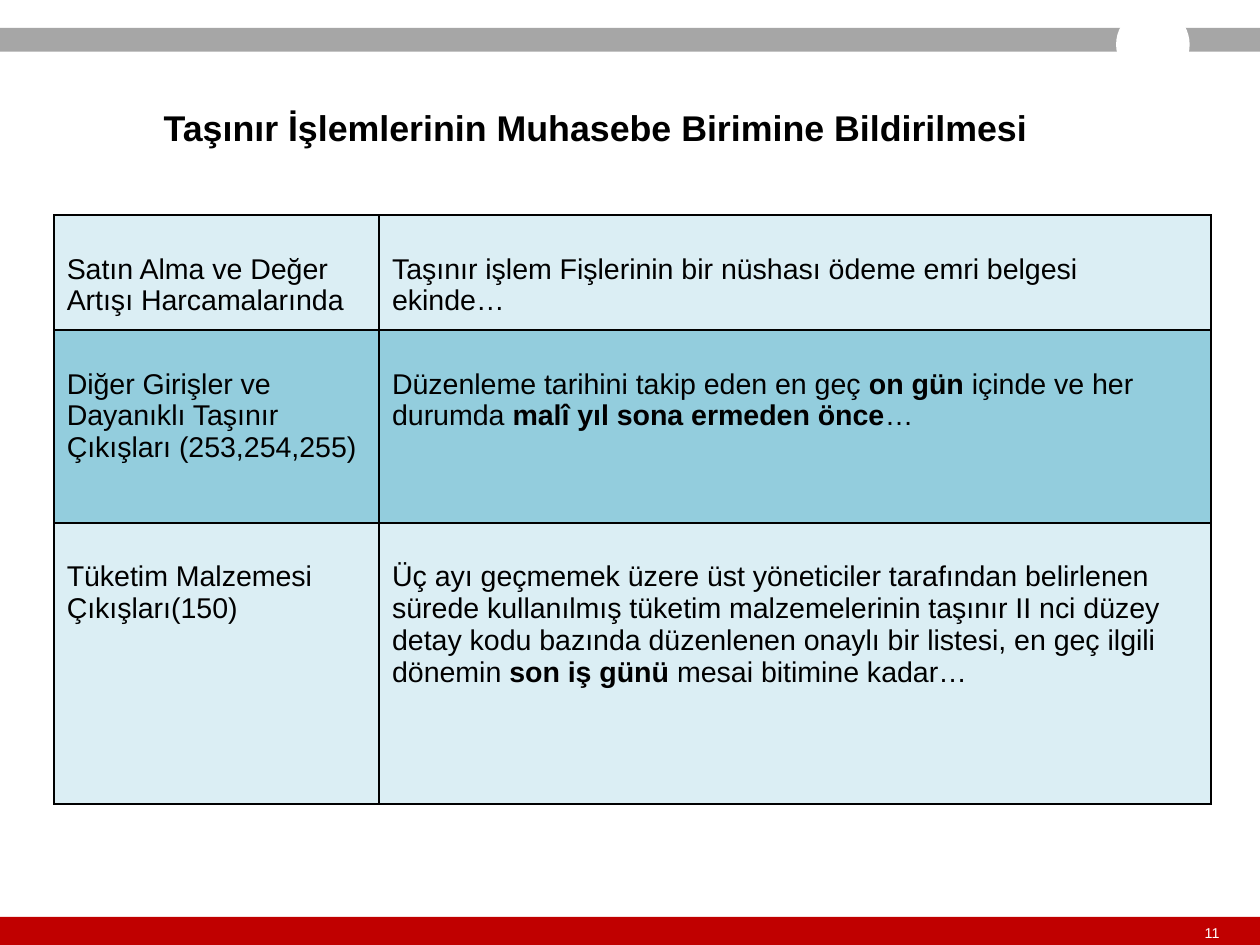
from lxml.etree import SubElement
from pptx import Presentation
from pptx.dml.color import RGBColor
from pptx.enum.shapes import MSO_SHAPE
from pptx.enum.text import MSO_ANCHOR, PP_ALIGN
from pptx.oxml.ns import qn
from pptx.util import Pt

BLACK = RGBColor(0x00, 0x00, 0x00)
WHITE = RGBColor(0xFF, 0xFF, 0xFF)
RED = RGBColor(0xC0, 0x00, 0x00)
GREY = RGBColor(0xA6, 0xA6, 0xA6)
PALE_BLUE = RGBColor(0xDB, 0xEE, 0xF4)
MID_BLUE = RGBColor(0x93, 0xCD, 0xDD)

WIDTH, HEIGHT = 705.6, 529.2

# Each cell is a list of runs; every second run is bold
DEADLINES = [
    (["Satın Alma ve Değer Artışı Harcamalarında"],
     ["Taşınır işlem Fişlerinin bir nüshası ödeme emri belgesi ekinde…"]),
    (["Diğer Girişler ve Dayanıklı Taşınır Çıkışları (253,254,255)"],
     ["Düzenleme tarihini takip eden en geç ", "on gün ",
      "içinde ve her durumda ", "malî yıl sona ermeden önce", "…"]),
    (["Tüketim Malzemesi Çıkışları(150)"],
     ["Üç ayı geçmemek üzere üst yöneticiler tarafından belirlenen sürede "
      "kullanılmış tüketim malzemelerinin taşınır II nci düzey detay kodu "
      "bazında düzenlenen onaylı bir listesi, en geç ilgili dönemin ",
      "son iş günü ", "mesai bitimine kadar…"]),
]


class SlideBuilder:
    font_name = "Arial"
    cell_size = 16
    cell_top_margin = 21.5

    def __init__(self, slide):
        self.slide = slide

    def style_run(self, run, size, color, bold=False):
        run.font.name = self.font_name
        run.font.size = Pt(size)
        run.font.color.rgb = color
        run.font.bold = bold

    def add_shape(self, kind, left, top, width, height, fill):
        shape = self.slide.shapes.add_shape(
            kind, Pt(left), Pt(top), Pt(width), Pt(height))
        shape.shadow.inherit = False
        shape.fill.solid()
        shape.fill.fore_color.rgb = fill
        shape.line.fill.background()
        return shape

    def set_text(self, shape, text, size, color, margin, bold=False):
        text_frame = shape.text_frame
        text_frame.text = text
        text_frame.vertical_anchor = MSO_ANCHOR.MIDDLE
        text_frame.margin_left = text_frame.margin_right = Pt(margin)
        text_frame.margin_top = text_frame.margin_bottom = Pt(margin)
        paragraph = text_frame.paragraphs[0]
        self.style_run(paragraph.runs[0], size, color, bold)
        return paragraph

    def add_text(self, left, top, width, height, text, size, color):
        box = self.slide.shapes.add_textbox(
            Pt(left), Pt(top), Pt(width), Pt(height))
        box.text_frame.word_wrap = False
        return self.set_text(box, text, size, color, 0)

    def add_borders(self, cell):
        properties = cell._tc.get_or_add_tcPr()
        for position, side in enumerate(("a:lnL", "a:lnR", "a:lnT", "a:lnB")):
            line = SubElement(properties, qn(side), w=str(Pt(1)))
            fill = SubElement(line, qn("a:solidFill"))
            SubElement(fill, qn("a:srgbClr"), val=str(BLACK))
            properties.insert(position, line)

    def add_table(self, left, top, column_widths, row_heights, rows, fills):
        table = self.slide.shapes.add_table(
            len(rows), len(column_widths), Pt(left), Pt(top),
            Pt(sum(column_widths)), Pt(sum(row_heights))).table
        for column, width in zip(table.columns, column_widths):
            column.width = Pt(width)
        for row, height, contents, fill in zip(
                table.rows, row_heights, rows, fills):
            row.height = Pt(height)
            for cell, texts in zip(row.cells, contents):
                cell.fill.solid()
                cell.fill.fore_color.rgb = fill
                cell.margin_top = Pt(self.cell_top_margin)
                self.add_borders(cell)
                paragraph = cell.text_frame.paragraphs[0]
                for index, text in enumerate(texts):
                    run = paragraph.add_run()
                    run.text = text
                    self.style_run(run, self.cell_size, BLACK, index % 2 == 1)


def main():
    presentation = Presentation()
    presentation.slide_width = Pt(WIDTH)
    presentation.slide_height = Pt(HEIGHT)
    builder = SlideBuilder(
        presentation.slides.add_slide(presentation.slide_layouts[6]))

    # Footer bar with page number
    builder.add_shape(MSO_SHAPE.RECTANGLE, 0, 513.4, WIDTH, 15.8, RED)
    builder.add_text(674.6, 517.7, 10, 9.4, "11", 8, WHITE)

    # Header bar with round cut-out
    builder.add_shape(MSO_SHAPE.RECTANGLE, 0, 15.6, WIDTH, 13.4, GREY)
    builder.add_shape(MSO_SHAPE.OVAL, 625, 4.3, 41.2, 41.2, WHITE)

    # Title
    title = builder.add_shape(MSO_SHAPE.RECTANGLE, 85.7, 49, 496, 33, WHITE)
    paragraph = builder.set_text(
        title, "Taşınır İşlemlerinin Muhasebe Birimine Bildirilmesi",
        20, BLACK, 5.8, bold=True)
    paragraph.alignment = PP_ALIGN.CENTER
    paragraph.line_spacing = 1.5
    paragraph.space_after = Pt(5.9)

    # Reporting deadlines
    builder.add_table(30.2, 120.4, [182.2, 465.8], [64.4, 108, 157.6],
                      DEADLINES, [PALE_BLUE, MID_BLUE, PALE_BLUE])

    presentation.save("out.pptx")


if __name__ == "__main__":
    main()
